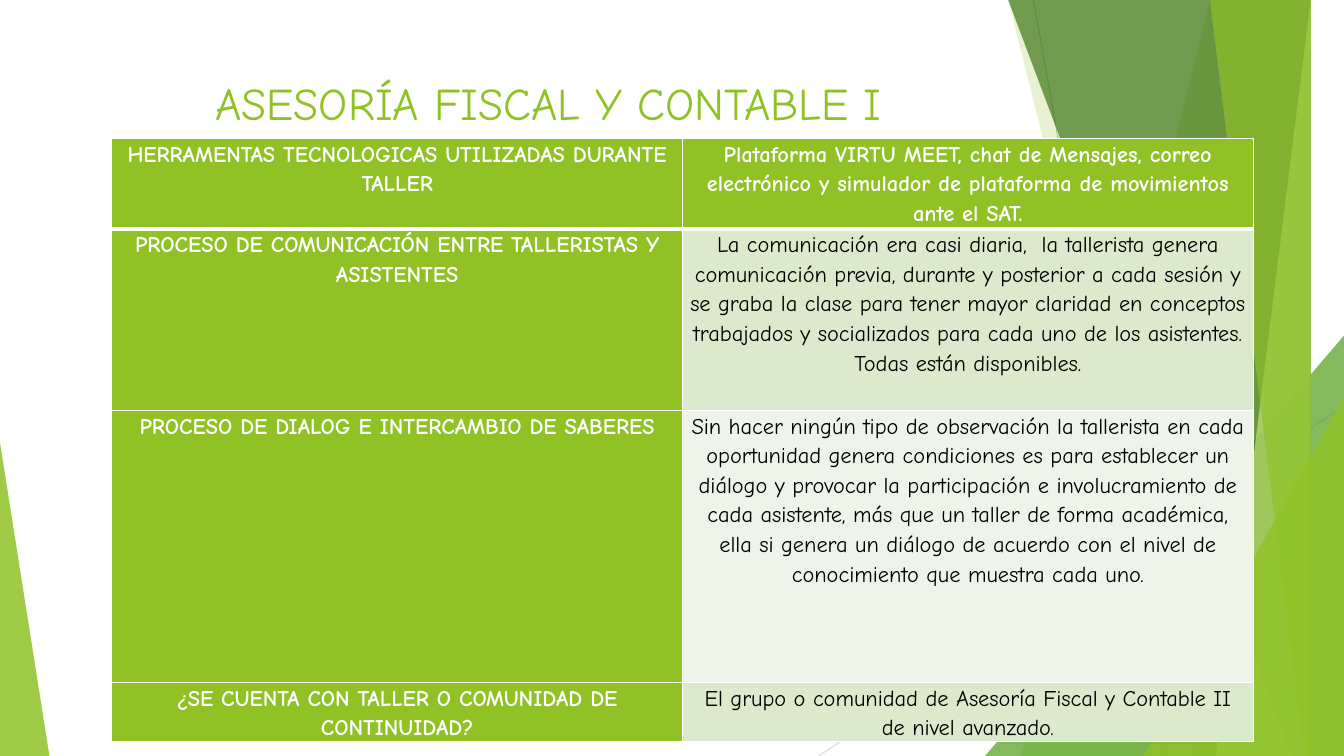
from lxml import etree
from pptx import Presentation
from pptx.dml.color import RGBColor
from pptx.enum.shapes import MSO_CONNECTOR, MSO_SHAPE
from pptx.enum.text import MSO_ANCHOR, PP_ALIGN
from pptx.oxml.ns import qn
from pptx.util import Inches, Pt

CENTER = PP_ALIGN.CENTER
MIDDLE = MSO_ANCHOR.MIDDLE
TRIANGLE = MSO_SHAPE.ISOSCELES_TRIANGLE
STRAIGHT = MSO_CONNECTOR.STRAIGHT

WIDTH, HEIGHT = 13.33, 7.5
FONT = "Comic Neue"
GREEN = RGBColor(0x90, 0xC2, 0x26)
MID_GREEN = RGBColor(0x54, 0xA0, 0x21)
DARK_GREEN = RGBColor(0x3F, 0x78, 0x19)
LIME = RGBColor(0xC0, 0xE4, 0x74)
PALE_GREEN = RGBColor(0xDB, 0xE9, 0xCD)
PALEST_GREEN = RGBColor(0xEE, 0xF4, 0xE8)
GRAY = RGBColor(0xBF, 0xBF, 0xBF)
LIGHT_GRAY = RGBColor(0xD9, 0xD9, 0xD9)
WHITE = RGBColor(0xFF, 0xFF, 0xFF)
BLACK = RGBColor(0x00, 0x00, 0x00)

TITLE = "ASESORÍA FISCAL Y CONTABLE I"
TITLE_BOX = (0.74, 0.67, 9.4, 0.7)
TABLE_BOX = (1.11, 1.37, 11.32, 5.85)
ROW_SHARES = (2, 4, 6, 1)
ROWS = (
    ("HERRAMENTAS TECNOLOGICAS UTILIZADAS DURANTE TALLER",
     "Plataforma VIRTU MEET, chat de Mensajes, correo electrónico y simulador de "
     "plataforma de movimientos ante el SAT."),
    ("PROCESO DE COMUNICACIÓN ENTRE TALLERISTAS Y ASISTENTES",
     "La comunicación era casi diaria,  la tallerista genera comunicación previa, "
     "durante y posterior a cada sesión y se graba la clase para tener mayor claridad "
     "en conceptos trabajados y socializados para cada uno de los asistentes. "
     "Todas están disponibles."),
    ("PROCESO DE DIALOG E INTERCAMBIO DE SABERES",
     "Sin hacer ningún tipo de observación la tallerista en cada oportunidad genera "
     "condiciones es para establecer un diálogo y provocar la participación e "
     "involucramiento de cada asistente, más que un taller de forma académica, ella si "
     "genera un diálogo de acuerdo con el nivel de conocimiento que muestra cada uno."),
    ("¿SE CUENTA CON TALLER O COMUNIDAD DE CONTINUIDAD?",
     "El grupo o comunidad de Asesoría Fiscal y Contable II de nivel avanzado."),
)


def add_text(paragraph, text, size, color, bold=False):
    paragraph.alignment = CENTER
    run = paragraph.add_run()
    run.text = text
    run.font.name = FONT
    run.font.size = Pt(size)
    run.font.bold = bold
    run.font.color.rgb = color


def paint(shape, color, opacity):
    """Fill a shape with a see-through colour; opacity is a percentage."""
    shape.shadow.inherit = False
    shape.line.fill.background()
    shape.fill.solid()
    shape.fill.fore_color.rgb = color
    color_element = shape.fill._xPr.find(qn("a:solidFill"))[0]
    etree.SubElement(color_element, qn("a:alpha"), val=str(opacity * 1000))


def add_thin_line(slide, start, end, color):
    line = slide.shapes.add_connector(STRAIGHT, *map(Inches, start + end))
    line.line.color.rgb = color
    line.line.width = Pt(0.75)
    etree.SubElement(line._element.spPr, qn("a:effectLst"))


def add_band(slide, top_x, bottom_x, color, opacity):
    """Add a full-height facet with a slanted left side, ending at the right edge."""
    builder = slide.shapes.build_freeform(top_x, 0, scale=Inches(1))
    builder.add_line_segments([(WIDTH, 0), (WIDTH, HEIGHT), (bottom_x, HEIGHT)], close=True)
    paint(builder.convert_to_shape(), color, opacity)


def add_corner(slide, left, width, height, apex, color, opacity):
    """Add a right triangle standing on the bottom edge; apex is 0 (left) or 1 (right)."""
    box = map(Inches, (left, HEIGHT - height, width, height))
    triangle = slide.shapes.add_shape(TRIANGLE, *box)
    triangle.adjustments[0] = apex
    paint(triangle, color, opacity)


def add_backdrop(slide):
    add_thin_line(slide, (10.25, 0), (11.58, HEIGHT), GRAY)
    add_thin_line(slide, (WIDTH, 4.03), (8.12, HEIGHT), LIGHT_GRAY)
    add_band(slide, 12.28, 10.04, GREEN, 30)
    add_band(slide, 10.5, 11.83, GREEN, 20)
    add_corner(slide, 9.77, 3.56, 4.17, 1, MID_GREEN, 72)
    add_band(slide, 10.21, 12.91, DARK_GREEN, 70)
    add_band(slide, 13.03, 11.92, LIME, 70)
    add_band(slide, 11.96, 13.18, GREEN, 65)
    add_corner(slide, 11.34, 1.99, 3.57, 1, GREEN, 80)
    add_corner(slide, 0, 0.49, 3.11, 0, GREEN, 85)


def add_title(slide, box):
    title = slide.shapes.title
    title.left, title.top, title.width, title.height = map(Inches, box)
    title.text_frame.vertical_anchor = MIDDLE
    add_text(title.text_frame.paragraphs[0], TITLE, 32.4, GREEN)


def add_borders(cell, top, bottom):
    """Draw white cell borders; top and bottom are widths in points."""
    properties = cell._tc.get_or_add_tcPr()
    for side, width in (("L", 1), ("R", 1), ("T", top), ("B", bottom)):
        line = etree.SubElement(properties, qn(f"a:ln{side}"), w=str(Pt(width)))
        fill = etree.SubElement(line, qn("a:solidFill"))
        etree.SubElement(fill, qn("a:srgbClr"), val=str(WHITE))


def fill_cell(cell, text, row, column):
    add_borders(cell, 3 if row == 1 else 1, 3 if row == 0 else 1)
    heading = row == 0 or column == 0
    cell.fill.solid()
    cell.fill.fore_color.rgb = GREEN if heading else (PALEST_GREEN, PALE_GREEN)[row % 2]
    cell.margin_left = cell.margin_right = Inches(0.07)
    cell.margin_top = cell.margin_bottom = 0
    paragraph = cell.text_frame.paragraphs[0]
    paragraph.line_spacing = 1.15
    add_text(paragraph, text, 16, WHITE if heading else BLACK, heading)


def add_workshop_table(slide, box):
    frame = slide.shapes.add_table(len(ROWS), len(ROWS[0]), *map(Inches, box))
    table = frame.table
    for row, texts in enumerate(ROWS):
        table.rows[row].height = Inches(box[3] * ROW_SHARES[row] / sum(ROW_SHARES))
        for column, text in enumerate(texts):
            fill_cell(table.cell(row, column), text, row, column)


def main():
    presentation = Presentation()
    presentation.slide_width = Inches(WIDTH)
    presentation.slide_height = Inches(HEIGHT)
    slide = presentation.slides.add_slide(presentation.slide_layouts[5])
    add_backdrop(slide)
    add_title(slide, TITLE_BOX)
    add_workshop_table(slide, TABLE_BOX)
    presentation.save("out.pptx")


if __name__ == "__main__":
    main()
